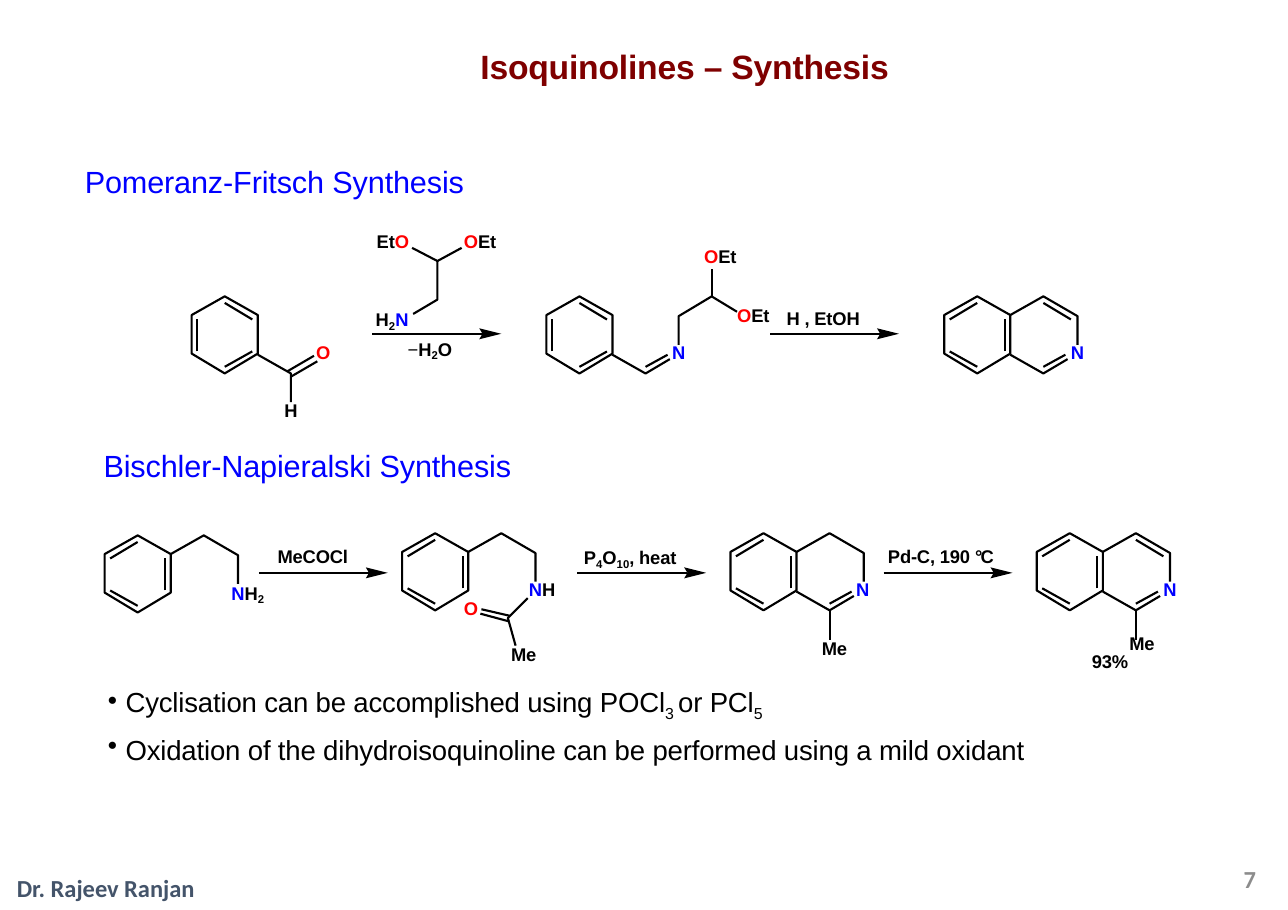
from dataclasses import dataclass

from lxml import etree
from pptx import Presentation
from pptx.dml.color import RGBColor
from pptx.enum.shapes import MSO_CONNECTOR
from pptx.enum.text import MSO_ANCHOR, PP_ALIGN
from pptx.oxml.ns import qn
from pptx.util import Inches, Pt

STRAIGHT = MSO_CONNECTOR.STRAIGHT
MIDDLE, TOP = MSO_ANCHOR.MIDDLE, MSO_ANCHOR.TOP
LEFT, CENTER, RIGHT = PP_ALIGN.LEFT, PP_ALIGN.CENTER, PP_ALIGN.RIGHT

BLACK, RED, BLUE = "000000", "FF0000", "0000FF"
MAROON, GRAY, SLATE = "7F0000", "8C8C8C", "44546A"
BOND_WIDTH = 1.39

Stroke = list[tuple[float, float]]


@dataclass
class Run:
    text: str
    color: str = BLACK
    subscript: bool = False
    bold: bool = True
    spacing: float = -0.1


@dataclass
class Style:
    size: float = 12
    font: str = "Arial"
    subscript_size: float = 12.8
    subscript_drop: int = -16
    before: tuple[float, ...] = (0.9,)
    align: PP_ALIGN = LEFT
    anchor: MSO_ANCHOR = TOP
    margins: tuple[float, float, float, float] = (0.01, 0.01, 0, 0)
    bullet: str = ""


@dataclass
class Label:
    box: tuple[float, float, float, float]
    paragraphs: list[list[Run]]
    style: Style


@dataclass
class Molecule:
    left: float
    top: float
    strokes: list[Stroke]


# Bonds, measured from the upper left corner of the benzene ring
RING: Stroke = [(0.3, 0), (0.6, 0.17), (0.6, 0.52), (0.3, 0.7),
                (0, 0.52), (0, 0.17), (0.3, 0)]
LEFT_DOUBLES: list[Stroke] = [[(0.05, 0.5), (0.05, 0.21)],
                              [(0.55, 0.5), (0.3, 0.64)],
                              [(0.3, 0.06), (0.55, 0.21)]]
RIGHT_DOUBLES: list[Stroke] = [[(0.6 - x, y) for x, y in stroke] for stroke in LEFT_DOUBLES]
LEFT_BENZENE = [RING, *LEFT_DOUBLES]
RIGHT_BENZENE = [RING, *RIGHT_DOUBLES]
ETHYL_CHAIN: Stroke = [(0.6, 0.17), (0.9, 0), (1.21, 0.18), (1.21, 0.44)]
IMINE: list[Stroke] = [[(0.6, 0.53), (0.9, 0.7), (1.12, 0.57)], [(1.1, 0.53), (0.9, 0.64)]]
ALKENE: Stroke = [(1.15, 0.21), (0.9, 0.06)]
METHYL: Stroke = [(0.9, 0.7), (0.9, 0.97)]

MOLECULES = [
    # Benzaldehyde, aminoacetal, imine, isoquinoline
    Molecule(1.74, 2.69, LEFT_BENZENE + [[(0.6, 0.53), (0.9, 0.7), (0.9, 0.96)],
                                         [(1.11, 0.54), (0.87, 0.68)],
                                         [(1.14, 0.59), (0.9, 0.73)]]),
    Molecule(3.74, 2.25, [[(0, 0), (0.23, 0.12), (0.45, 0)],
                          [(0.23, 0.12), (0.23, 0.47), (0.01, 0.6)]]),
    Molecule(4.96, 2.69, LEFT_BENZENE + IMINE + [
        [(1.2, 0.44), (1.2, 0.18), (1.5, 0), (1.73, 0.14)], [(1.5, 0), (1.5, -0.25)]]),
    Molecule(8.57, 2.69, RIGHT_BENZENE + IMINE + [ETHYL_CHAIN, ALKENE]),
    # Phenethylamine, amide, dihydroisoquinoline, methylisoquinoline
    Molecule(0.95, 4.86, RIGHT_BENZENE + [ETHYL_CHAIN]),
    Molecule(3.65, 4.84, RIGHT_BENZENE + [ETHYL_CHAIN,
                                          [(1.14, 0.59), (0.96, 0.77), (1.03, 1.02)],
                                          [(0.71, 0.73), (0.97, 0.8)],
                                          [(0.72, 0.69), (0.98, 0.75)]]),
    Molecule(6.63, 4.84, RIGHT_BENZENE + IMINE + [ETHYL_CHAIN, METHYL]),
    Molecule(9.41, 4.84, RIGHT_BENZENE + IMINE + [ETHYL_CHAIN, ALKENE, METHYL]),
]

ARROWS = [(3.38, 3.03), (6.99, 3.03), (2.35, 5.2), (5.24, 5.2), (8.02, 5.2)]

# Atom and reagent labels: left, top, width, runs
N, O, H = Run("N", BLUE), Run("O", RED), Run("H")
ET, ME, TWO = Run("Et"), Run("Me", spacing=-0.15), Run("2", subscript=True)
ATOMS: list[tuple[float, float, float, list[Run]]] = [
    (2.86, 3.09, 0.16, [O]),
    (2.57, 3.61, 0.15, [H]),
    (3.41, 2.08, 0.33, [ET, O]),
    (4.2, 2.08, 0.33, [O, ET]),
    (3.4, 2.78, 0.39, [H, TWO, N]),
    (3.69, 3.05, 0.49, [Run("−", bold=False), H, TWO, Run("O")]),
    (6.09, 3.09, 0.15, [N]),
    (6.68, 2.75, 0.32, [O, ET]),
    (6.38, 2.22, 0.32, [O, ET]),
    (7.13, 2.78, 0.76, [Run("H , EtOH")]),
    (9.71, 3.09, 0.15, [N]),
    (2.09, 5.26, 0.39, [N, H, TWO]),
    (2.51, 4.94, 0.7, [Run("MeCOCl")]),
    (4.79, 5.24, 0.27, [N, H]),
    (4.63, 5.83, 0.26, [ME]),
    (4.2, 5.41, 0.16, [O]),
    (5.29, 4.94, 0.96, [Run("P", spacing=0), Run("4", subscript=True, spacing=0),
                        Run("O", spacing=0), Run("10", subscript=True, spacing=0),
                        Run(", heat")]),
    (7.76, 5.24, 0.15, [N]),
    (7.45, 5.77, 0.26, [ME]),
    (8.05, 4.94, 1, [Run("Pd-C, 190 "), Run("°C", spacing=-1.3)]),
    (10.55, 5.24, 0.15, [N]),
    (10.24, 5.73, 0.27, [ME]),
    (9.9, 5.89, 0.4, [Run("93%")]),
]

HEADING = Style(size=20, before=(1,))
NOTES = Style(size=18, subscript_size=18, subscript_drop=-23, before=(7.8, 6.8),
              margins=(0, 0.11, 0, 0), bullet="•")
TEXTS = [
    Label((4.35, 0.41, 3.82, 0.38), [[Run("Isoquinolines – Synthesis", MAROON)]],
          Style(size=22, before=(1,))),
    Label((0.76, 1.47, 4.46, 0.35), [[Run("Pomeranz-Fritsch Synthesis", BLUE, bold=False)]],
          HEADING),
    Label((0.93, 4.05, 4.79, 0.35), [[Run("Bischler-Napieralski Synthesis", BLUE, bold=False)]],
          HEADING),
    Label((0.94, 6.11, 8.5, 0.82), [
        [Run("Cyclisation can be accomplished using POCl", bold=False),
         Run("3 ", subscript=True, bold=False), Run("or PCl", bold=False),
         Run("5", subscript=True, bold=False)],
        [Run("Oxidation of the dihydroisoquinoline can be performed using a mild oxidant",
             bold=False)]], NOTES),
    Label((10.93, 7.69, 0.58, 0.57), [[Run("7", GRAY, spacing=0)]],
          Style(16, "Calibri", before=(0,), align=RIGHT, anchor=MIDDLE,
                margins=(0.11, 0.06, 0.11, 0.06))),
    Label((-0.07, 7.88, 2.06, 0.33), [[Run("Dr. Rajeev Ranjan", SLATE, spacing=0)]],
          Style(16, "Calibri", before=(0,), align=CENTER, margins=(0.1, 0.05, 0.1, 0.05))),
]


def rgb(color: str) -> RGBColor:
    return RGBColor.from_string(color)


def add_label(slide, label: Label) -> None:
    style = label.style
    frame = slide.shapes.add_textbox(*map(Inches, label.box)).text_frame
    frame.word_wrap = True
    frame.vertical_anchor = style.anchor
    (frame.margin_left, frame.margin_top,
     frame.margin_right, frame.margin_bottom) = map(Inches, style.margins)
    for index, (runs, before) in enumerate(zip(label.paragraphs, style.before)):
        paragraph = frame.add_paragraph() if index else frame.paragraphs[0]
        paragraph.alignment = style.align
        paragraph.space_before = Pt(before)
        if style.bullet:
            properties = paragraph._p.get_or_add_pPr()
            properties.set("marL", str(Inches(0.2)))
            properties.set("indent", str(Inches(-0.16)))
            etree.SubElement(properties, qn("a:buChar")).set("char", style.bullet)
        for part in runs:
            run = paragraph.add_run()
            run.text = part.text
            run.font.name = style.font
            run.font.size = Pt(style.subscript_size if part.subscript else style.size)
            run.font.bold = part.bold
            run.font.color.rgb = rgb(part.color)
            properties = run._r.get_or_add_rPr()
            properties.set("spc", str(round(part.spacing * 100)))
            if part.subscript:
                properties.set("baseline", str(style.subscript_drop * 1000))


def add_strokes(slide, left: float, top: float, strokes: list[Stroke], closed: bool = False):
    contours = [[(Inches(left + x), Inches(top + y)) for x, y in stroke] for stroke in strokes]
    builder = slide.shapes.build_freeform(*contours[0][0], scale=1.0)
    for index, points in enumerate(contours):
        if index:
            builder.move_to(*points[0])
        builder.add_line_segments(points[1:], close=closed)
    shape = builder.convert_to_shape()
    shape.shadow.inherit = False
    return shape


def add_molecule(slide, molecule: Molecule) -> None:
    shape = add_strokes(slide, molecule.left, molecule.top, molecule.strokes)
    shape.fill.background()
    shape.line.color.rgb = rgb(BLACK)
    shape.line.width = Pt(BOND_WIDTH)


def add_reaction_arrow(slide, left: float, middle: float) -> None:
    shaft = slide.shapes.add_connector(STRAIGHT, Inches(left), Inches(middle),
                                       Inches(left + 1), Inches(middle))
    shaft.line.color.rgb = rgb(BLACK)
    shaft.line.width = Pt(BOND_WIDTH)
    etree.SubElement(shaft._element.spPr, qn("a:effectLst"))
    head = add_strokes(slide, left + 0.97, middle,
                       [[(0.2, 0), (0, -0.05), (0.03, 0), (0, 0.05)]], closed=True)
    head.fill.solid()
    head.fill.fore_color.rgb = rgb(BLACK)
    head.line.fill.background()


def main() -> None:
    presentation = Presentation()
    presentation.slide_width, presentation.slide_height = Inches(11.69), Inches(8.26)
    slide = presentation.slides.add_slide(presentation.slide_layouts[6])
    for molecule in MOLECULES:
        add_molecule(slide, molecule)
    for left, middle in ARROWS:
        add_reaction_arrow(slide, left, middle)
    for left, top, width, runs in ATOMS:
        add_label(slide, Label((left, top, width, 0.23), [runs], Style()))
    for label in TEXTS:
        add_label(slide, label)
    presentation.save("out.pptx")


if __name__ == "__main__":
    main()
